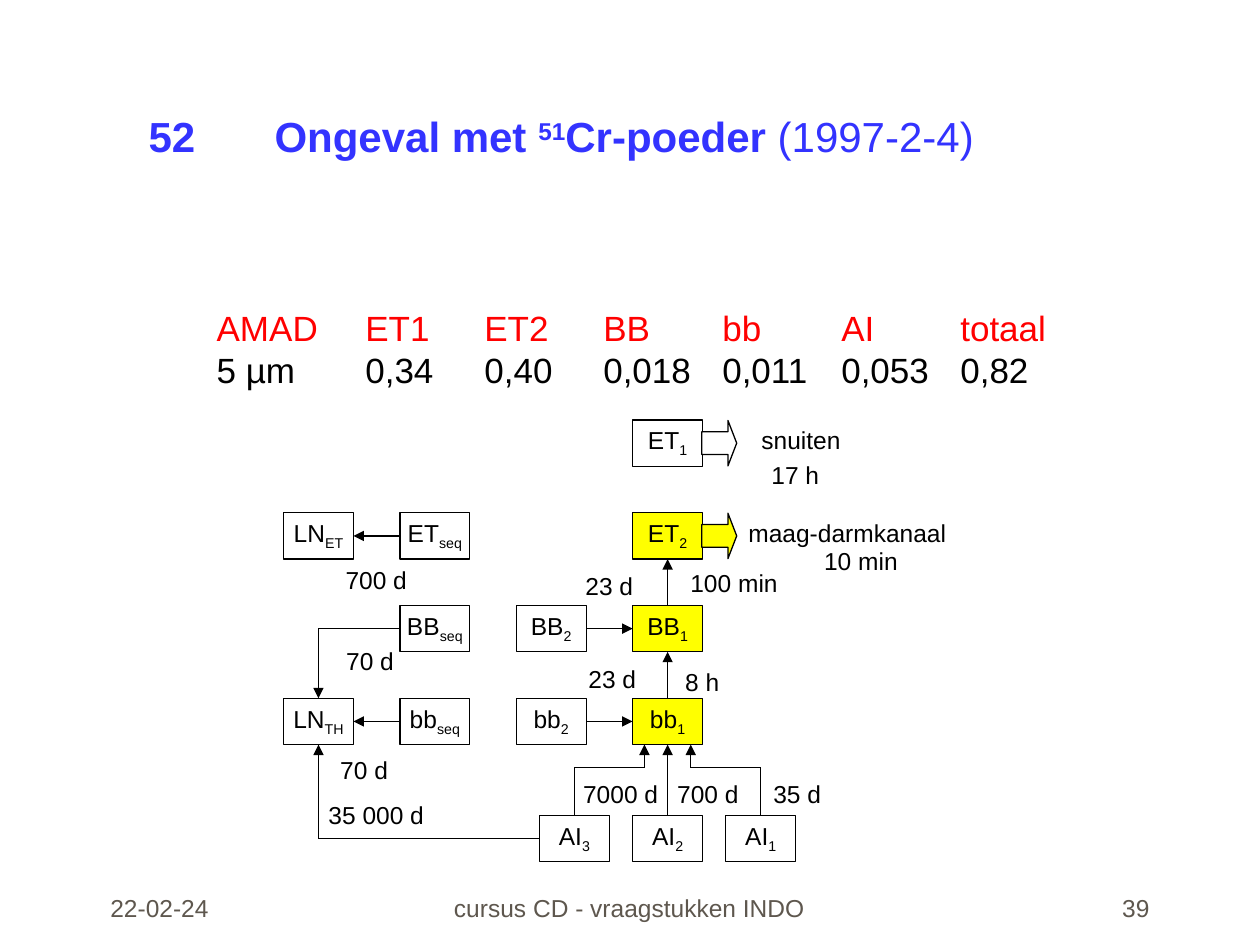
from lxml.etree import SubElement
from pptx import Presentation
from pptx.dml.color import RGBColor
from pptx.enum.shapes import MSO_CONNECTOR, MSO_SHAPE
from pptx.enum.text import MSO_ANCHOR, PP_ALIGN
from pptx.oxml.ns import qn
from pptx.util import Pt

COLORS = {"black": "000000", "white": "FFFFFF", "yellow": "FFFF00",
          "red": "FF0000", "blue": "3333FF", "gray": "5E574E"}

# Grid of the compartment diagram, in points
BOX_WIDTH, BOX_HEIGHT = 40, 26.5
COLUMNS = [162 + 66.5 * index for index in range(4)]
ROWS = [240 + 53 * index for index in range(4)]
ALVEOLAR_TOP = 466
ALVEOLAR_STEP = 53.25
SMALL_MARGINS = {"margin_left": Pt(1.5), "margin_top": Pt(3),
                 "margin_right": Pt(1.5), "margin_bottom": Pt(1.5)}

# Name, subscript, column, row, fill
COMPARTMENTS = [
    ("ET", "1", 3, 0, "white"), ("ET", "2", 3, 1, "yellow"),
    ("BB", "1", 3, 2, "yellow"), ("bb", "1", 3, 3, "yellow"),
    ("BB", "2", 2, 2, "white"), ("bb", "2", 2, 3, "white"),
    ("ET", "seq", 1, 1, "white"), ("BB", "seq", 1, 2, "white"),
    ("bb", "seq", 1, 3, "white"),
    ("LN", "ET", 0, 1, "white"), ("LN", "TH", 0, 3, "white"),
]

# Text, left, top, width, height
LABELS = [
    ("snuiten", 427.7, 240, 60, 26.5),
    ("17 h", 438, 260, 33, 20),
    ("maag-darmkanaal", 421.2, 293, 126, 26.5),
    ("10 min", 460, 309, 64, 27),
    ("100 min", 386.5, 321.8, 66, 29),
    ("23 d", 324.7, 323.3, 47, 35),
    ("23 d", 333.4, 376.5, 33, 25),
    ("8 h", 388, 378, 26.5, 20),
    ("700 d", 195, 319.7, 40, 20),
    ("70 d", 195, 366, 33, 25),
    ("70 d", 188.6, 428.4, 39, 24.5),
    ("35 000 d", 185, 454.3, 60, 23),
    ("7000 d", 331.2, 442, 47, 20),
    ("700 d", 384.5, 442, 40, 20),
    ("35 d", 434, 442, 43, 32),
]

# Left, top, width, height, alignment, text
FOOTERS = [
    (56, 490.5, 152, 40, PP_ALIGN.LEFT, "22-02-24"),
    (247.7, 490.5, 224, 40, PP_ALIGN.CENTER, "cursus CD - vraagstukken INDO"),
    (520, 490.5, 144, 40, PP_ALIGN.RIGHT, "39"),
]

DEPOSITION = [
    ("red", ["AMAD", "ET1", "ET2", "BB", "bb", "AI", "totaal"]),
    ("black", ["5 µm", "0,34", "0,40", "0,018", "0,011", "0,053", "0,82"]),
]


def rgb(name):
    return RGBColor.from_string(COLORS[name])


def set_values(target, values):
    for name, value in values.items():
        setattr(target, name, value)


def add_span(para, text, size, color, bold=False, baseline=0):
    span = para.add_run()
    span.text = text
    set_values(span.font, {"name": "Arial", "size": Pt(size), "bold": bold})
    span.font.color.rgb = rgb(color)
    if baseline:
        span.font._element.set("baseline", str(baseline * 1000))


def add_tabs(para, positions):
    tab_list = SubElement(para._p.get_or_add_pPr(), qn("a:tabLst"))
    for position in positions:
        SubElement(tab_list, qn("a:tab"), pos=str(Pt(position)), algn="l")


def add_text_box(page, left, top, width, height, **frame_values):
    box = page.shapes.add_textbox(Pt(left), Pt(top), Pt(width), Pt(height))
    set_values(box.text_frame, {"word_wrap": True, **frame_values})
    return box.text_frame


def add_label(page, text, *place):
    frame = add_text_box(page, *place, **SMALL_MARGINS)
    para = frame.paragraphs[0]
    para.alignment = PP_ALIGN.CENTER
    add_span(para, text, 14, "black")


def add_outlined(page, kind, left, top, width, height, fill):
    shape = page.shapes.add_shape(kind, Pt(left), Pt(top), Pt(width), Pt(height))
    shape.shadow.inherit = False
    shape.fill.solid()
    shape.fill.fore_color.rgb = rgb(fill)
    shape.line.color.rgb = rgb("black")
    shape.line.width = Pt(0.75)
    return shape


def add_compartment(page, name, subscript, left, top, fill):
    box = add_outlined(page, MSO_SHAPE.RECTANGLE, left, top,
                       BOX_WIDTH, BOX_HEIGHT, fill)
    set_values(box.text_frame, {"vertical_anchor": MSO_ANCHOR.TOP,
                                "word_wrap": True, **SMALL_MARGINS})
    para = box.text_frame.paragraphs[0]
    para.alignment = PP_ALIGN.CENTER
    add_span(para, name, 14, "black")
    add_span(para, subscript, 14, "black", baseline=-25)


def add_outflow(page, row, fill):
    arrow = add_outlined(page, MSO_SHAPE.RIGHT_ARROW, COLUMNS[3] + BOX_WIDTH - 0.5,
                         ROWS[row] + 0.25, 20, 26, fill)
    arrow.adjustments[0] = 0.5
    arrow.adjustments[1] = 0.25


def add_route(page, *points):
    """Join the points with straight lines; the last one ends in an arrowhead."""
    for start, end in zip(points, points[1:]):
        line = page.shapes.add_connector(
            MSO_CONNECTOR.STRAIGHT, *(Pt(value) for value in start + end))
        line.line.color.rgb = rgb("black")
        line.line.width = Pt(0.75)
        properties = line._element.spPr
        if end == points[-1]:
            SubElement(properties.get_or_add_ln(), qn("a:tailEnd"), type="triangle")
        SubElement(properties, qn("a:effectLst"))


def add_title(page):
    frame = add_text_box(page, 77.8, 54, 607.7, 47.5,
                         vertical_anchor=MSO_ANCHOR.MIDDLE)
    para = frame.paragraphs[0]
    add_tabs(para, [72])
    add_span(para, "52\tOngeval met ", 24, "blue", bold=True)
    add_span(para, "51", 24, "blue", bold=True, baseline=30)
    add_span(para, "Cr-poeder", 24, "blue", bold=True)
    add_span(para, " (1997-2-4)", 24, "blue")


def add_deposition(page):
    frame = add_text_box(page, 82.8, 171.4, 607, 55.4, margin_left=Pt(41))
    for index, (color, values) in enumerate(DEPOSITION):
        para = frame.add_paragraph() if index else frame.paragraphs[0]
        add_tabs(para, [85 + 68 * step for step in range(6)])
        add_span(para, "\t".join(values), 20, color)


def add_footers(page):
    for *place, alignment, text in FOOTERS:
        frame = add_text_box(page, *place, vertical_anchor=MSO_ANCHOR.BOTTOM)
        frame.paragraphs[0].alignment = alignment
        add_span(frame.paragraphs[0], text, 14, "gray")


def add_routes(page):
    lymph, main = COLUMNS[0] + BOX_WIDTH / 2, COLUMNS[3] + BOX_WIDTH / 2
    middles = [top + BOX_HEIGHT / 2 for top in ROWS]
    bottom = ROWS[3] + BOX_HEIGHT
    # Upward along the main column
    for row in (1, 2):
        add_route(page, (main, ROWS[row + 1]), (main, ROWS[row] + BOX_HEIGHT))
    add_route(page, (main, ALVEOLAR_TOP), (main, bottom))
    # Across between neighbouring columns
    for row in (2, 3):
        add_route(page, (COLUMNS[2] + BOX_WIDTH, middles[row]),
                  (COLUMNS[3], middles[row]))
    for row in (1, 3):
        add_route(page, (COLUMNS[1], middles[row]),
                  (COLUMNS[0] + BOX_WIDTH, middles[row]))
    # Bent routes
    for side in (-1, 1):
        outer, inner = main + side * ALVEOLAR_STEP, main + side * BOX_HEIGHT / 2
        bend = bottom + BOX_HEIGHT / 2
        add_route(page, (outer, ALVEOLAR_TOP), (outer, bend),
                  (inner, bend), (inner, bottom))
    add_route(page, (COLUMNS[1], middles[2]), (lymph, middles[2]), (lymph, ROWS[3]))
    floor = ALVEOLAR_TOP + BOX_HEIGHT / 2
    add_route(page, (COLUMNS[3] - ALVEOLAR_STEP, floor), (lymph, floor), (lymph, bottom))


def main():
    deck = Presentation()
    set_values(deck, {"slide_width": Pt(720), "slide_height": Pt(540)})
    page = deck.slides.add_slide(deck.slide_layouts[6])
    add_footers(page)
    add_title(page)
    # Compartment diagram
    for name, subscript, column, row, fill in COMPARTMENTS:
        add_compartment(page, name, subscript, COLUMNS[column], ROWS[row], fill)
    for step, subscript in enumerate("321", start=-1):
        add_compartment(page, "AI", subscript, COLUMNS[3] + step * ALVEOLAR_STEP,
                        ALVEOLAR_TOP, "white")
    add_outflow(page, 0, "white")
    add_outflow(page, 1, "yellow")
    add_routes(page)
    for label in LABELS:
        add_label(page, *label)
    add_deposition(page)
    deck.save("out.pptx")


if __name__ == "__main__":
    main()
